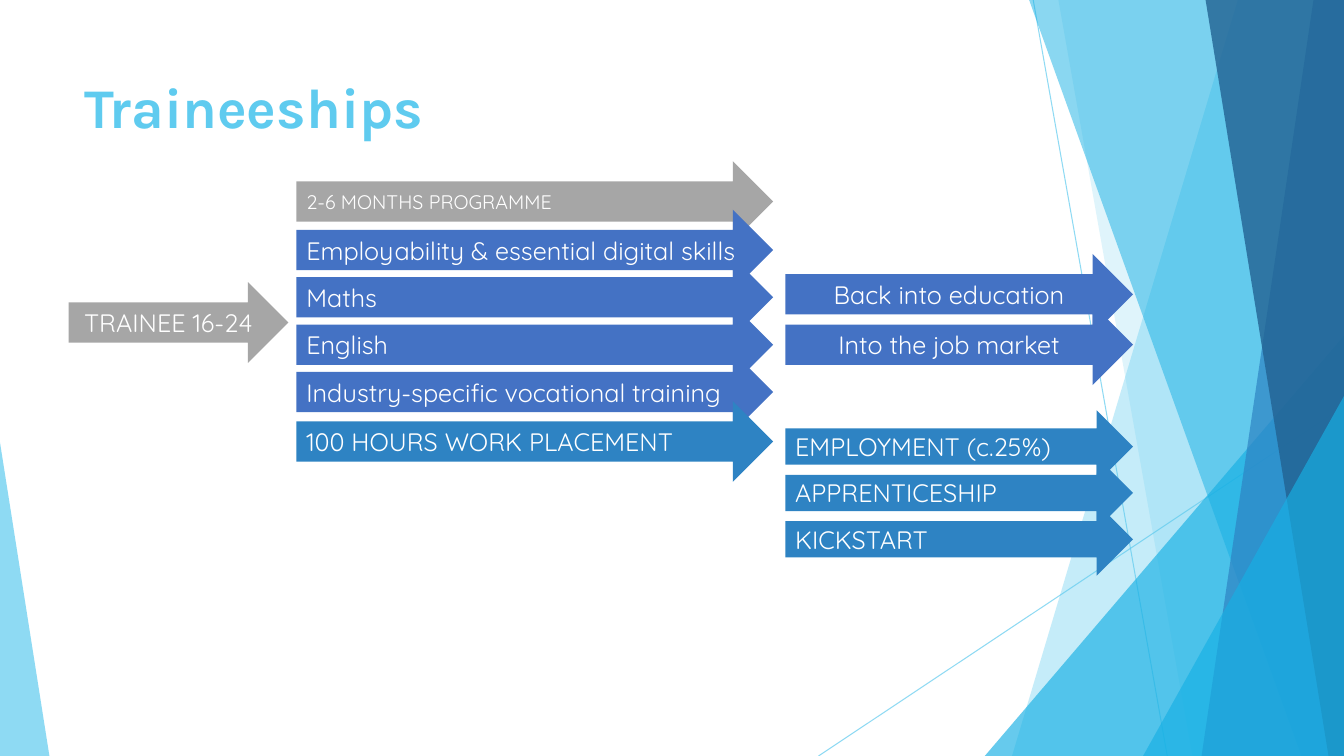
import dataclasses

import pptx
import pptx.dml.color
import pptx.enum.shapes
import pptx.enum.text
import pptx.oxml.ns
import pptx.util
from lxml import etree

SHAPE = pptx.enum.shapes.MSO_SHAPE
ALIGN = pptx.enum.text.PP_ALIGN
ANCHOR = pptx.enum.text.MSO_ANCHOR

# Grid of square cells, ten to the inch
CELL = 0.1
WIDE, HIGH = 133.33, 75


@dataclasses.dataclass(frozen=True)
class Theme:
    sky: str = "5FCBEF"
    cyan: str = "17B0E4"
    blue: str = "2E83C3"
    navy: str = "226292"
    royal: str = "4472C4"
    grey: str = "A6A6A6"
    white: str = "FFFFFF"
    head_font: str = "Karla"
    body_font: str = "Quicksand"
    title: int = 40
    body: int = 18
    small: int = 14
    hair: float = 0.75


THEME = Theme()


def grid(*cells):
    return [pptx.util.Inches(cell * CELL) for cell in cells]


def paint(part, color, alpha=100):
    """Give a fill or a line one colour, with alpha in percent."""
    fill = getattr(part, "fill", part)
    fill.solid()
    fill.fore_color.rgb = pptx.dml.color.RGBColor.from_string(color)
    if alpha < 100:
        tint = fill._xPr.find(".//" + pptx.oxml.ns.qn("a:srgbClr"))
        etree.SubElement(tint, pptx.oxml.ns.qn("a:alpha"), val=str(alpha * 1000))


def finish(shape, color, alpha=100):
    shape.shadow.inherit = False
    paint(shape.fill, color, alpha)
    shape.line.fill.background()


def write(shape, text, size=THEME.body, font=THEME.body_font, color=THEME.white,
          bold=False, align=ALIGN.LEFT, anchor=ANCHOR.MIDDLE):
    frame = shape.text_frame
    frame.word_wrap = True
    frame.vertical_anchor = anchor
    line = frame.paragraphs[0]
    line.alignment = align
    run = line.add_run()
    run.text = text
    run.font.size = pptx.util.Pt(size)
    run.font.name = font
    run.font.bold = bold
    run.font.color.rgb = pptx.dml.color.RGBColor.from_string(color)


def ray(slide, start, end):
    """Draw a thin pale line."""
    line = slide.shapes.add_connector(
        pptx.enum.shapes.MSO_CONNECTOR.STRAIGHT, *grid(*start, *end))
    line.line.width = pptx.util.Pt(THEME.hair)
    paint(line.line, THEME.sky, 70)
    etree.SubElement(line._element.spPr, pptx.oxml.ns.qn("a:effectLst"))


def band(slide, top, foot, color, alpha):
    """Fill the full height from a slanted edge to the right side."""
    points = [grid(*point) for point in
              ((top, 0), (WIDE, 0), (WIDE, HIGH), (foot, HIGH))]
    build = slide.shapes.build_freeform(*points[0], scale=1.0)
    build.add_line_segments(points[1:], close=True)
    finish(build.convert_to_shape(), color, alpha)


def wedge(slide, left, top, width, peak, color, alpha):
    """Stand a triangle on the bottom edge."""
    shape = slide.shapes.add_shape(
        SHAPE.ISOSCELES_TRIANGLE, *grid(left, top, width, HIGH - top))
    shape.adjustments[0] = peak
    finish(shape, color, alpha)


def arrow(slide, box, text, color, **style):
    shape = slide.shapes.add_shape(SHAPE.RIGHT_ARROW, *grid(*box))
    finish(shape, color)
    write(shape, text, **style)


def stack(slide, box, step, texts, color, **style):
    """Place arrows below each other at an equal step."""
    left, top, width, height = box
    for row, text in enumerate(texts):
        arrow(slide, (left, top + row * step, width, height), text, color, **style)


def backdrop(slide):
    ray(slide, (102.5, 0), (115.8, HIGH))
    ray(slide, (WIDE, 40.3), (81.2, HIGH))
    band(slide, 122.8, 100.4, THEME.sky, 36)
    band(slide, 105, 118.3, THEME.sky, 20)
    wedge(slide, 97.7, 33.3, 35.63, 1, THEME.cyan, 66)
    band(slide, 102.1, 129.1, THEME.cyan, 50)
    band(slide, 130.3, 119.2, THEME.blue, 70)
    band(slide, 119.6, 131.8, THEME.navy, 80)
    wedge(slide, 113.4, 39.3, 19.93, 1, THEME.cyan, 66)
    wedge(slide, 0, 43.9, 4.9, 0, THEME.sky, 70)


def main():
    deck = pptx.Presentation()
    deck.slide_width, deck.slide_height = grid(WIDE, HIGH)
    slide = deck.slides.add_slide(deck.slide_layouts[6])
    backdrop(slide)

    # Title
    title = slide.shapes.add_textbox(*grid(7.4, 6.7, 94, 14.4))
    write(title, "Traineeships", size=THEME.title, font=THEME.head_font,
          color=THEME.sky, bold=True, anchor=ANCHOR.TOP)

    # Entry and programme
    mid, wide, tall = 29.4, 47.3, 8
    arrow(slide, (mid, 16, wide, tall), "2-6 MONTHS PROGRAMME", THEME.grey,
          size=THEME.small)
    arrow(slide, (6.8, 28, 21.8, tall), "TRAINEE 16-24", THEME.grey,
          align=ALIGN.CENTER)
    stack(slide, (mid, 20.8, wide, tall), 4.7,
          ["Employability & essential digital skills", "Maths", "English",
           "Industry-specific vocational training"], THEME.royal)
    arrow(slide, (mid, 39.8, wide, tall), "100 HOURS WORK PLACEMENT", THEME.blue)

    # Outcomes
    right, span = 77.9, 34.5
    stack(slide, (right, 40.7, span, 7.2), 4.6,
          ["EMPLOYMENT (c.25%)", "APPRENTICESHIP", "KICKSTART"], THEME.blue)
    stack(slide, (right, 25.2, span, tall), 5,
          ["Back into education", "Into the job market"], THEME.royal,
          align=ALIGN.CENTER)

    deck.save("out.pptx")


if __name__ == "__main__":
    main()
